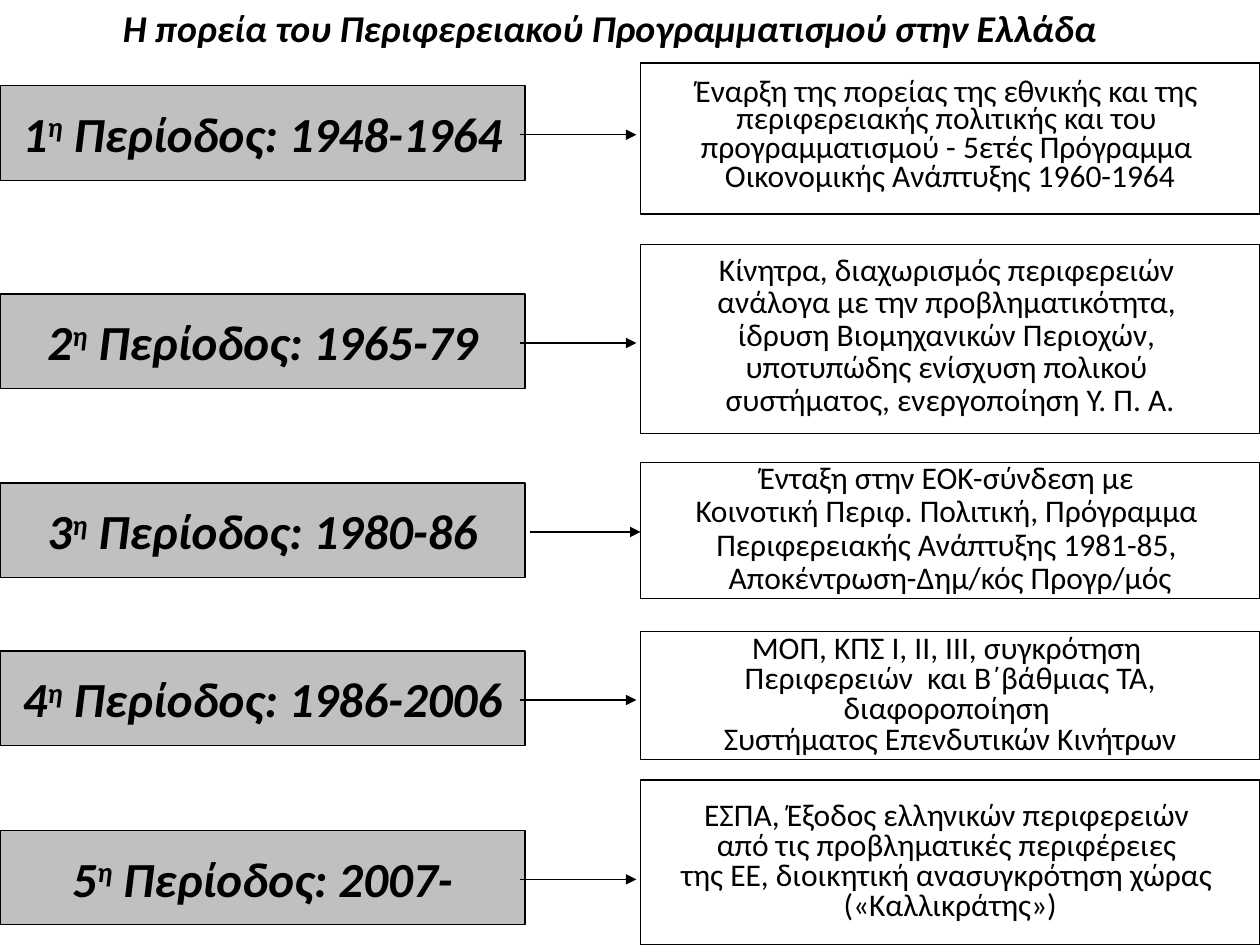
import pptx
import pptx.util
import pptx.dml.color
import pptx.enum.shapes
import pptx.enum.text
import pptx.oxml
import pptx.oxml.ns
from pptx.util import Pt

BLACK = pptx.dml.color.RGBColor(0, 0, 0)
GREY = pptx.dml.color.RGBColor(0xC0, 0xC0, 0xC0)

PERIOD_WIDTH, PERIOD_HEIGHT = 300, 54
EVENT_LEFT, EVENT_WIDTH = 366, 354
ARROW_DROP = 28

PERIODS = [
    (49, "1948-1964", (297, 363.6)),
    (168, "1965-79", (297, 363.6)),
    (276, "1980-86", (303, 366)),
    (372, "1986-2006", (297, 363.6)),
    (474.5, "2007-", (297, 363.6)),
]

EVENTS = [
    (36, 86.4, 0.55, 2.7, 1.8, [
        "Έναρξη της πορείας της εθνικής και της ",
        "περιφερειακής πολιτικής και του ",
        "προγραμματισμού - 5ετές Πρόγραμμα ",
        "Οικονομικής Ανάπτυξης 1960-1964"]),
    (139.7, 108, 0.65, 3.6, 1, [
        "Κίνητρα, διαχωρισμός περιφερειών ",
        "ανάλογα με την προβληματικότητα, ",
        "ίδρυση Βιομηχανικών Περιοχών, ",
        "υποτυπώδης ενίσχυση πολικού ",
        "συστήματος, ενεργοποίηση Υ. Π. Α."]),
    (264.2, 77.8, 0.8, 1.8, 0, [
        "Ένταξη στην ΕΟΚ-σύνδεση με ",
        "Κοινοτική Περιφ. Πολιτική, Πρόγραμμα ",
        "Περιφερειακής Ανάπτυξης 1981-85, ",
        "Αποκέντρωση-Δημ/κός Προγρ/μός"]),
    (360.7, 73.5, 0.8, 0, 0, [
        "ΜΟΠ, ΚΠΣ Ι, ΙΙ, ΙΙΙ, συγκρότηση ",
        "Περιφερειών  και Β΄βάθμιας ΤΑ,",
        "διαφοροποίηση ",
        "Συστήματος Επενδυτικών Κινήτρων"]),
    (445.7, 94.3, 0.8, 0, 0, [
        "ΕΣΠΑ, Έξοδος ελληνικών περιφερειών ",
        "από τις προβληματικές περιφέρειες ",
        "της ΕΕ, διοικητική ανασυγκρότηση χώρας ",
        "(«Καλλικράτης»)"]),
]


def format_paragraph(p, size, strong=False):
    p.alignment = pptx.enum.text.PP_ALIGN.CENTER
    p.font.name = "Calibri"
    p.font.size = Pt(size)
    p.font.bold = p.font.italic = strong
    p.font.color.rgb = BLACK


def add_title(s, text):
    sp = s.shapes.title
    sp.left, sp.top, sp.width, sp.height = Pt(-65.5), Pt(0), Pt(828), Pt(31.7)
    tf = sp.text_frame
    tf.text = text
    tf.auto_size = pptx.enum.text.MSO_AUTO_SIZE.NONE
    tf.vertical_anchor = pptx.enum.text.MSO_ANCHOR.MIDDLE
    format_paragraph(tf.paragraphs[0], 21.6, strong=True)


def add_box(s, left, top, width, height, fill=None):
    sp = s.shapes.add_shape(pptx.enum.shapes.MSO_SHAPE.RECTANGLE,
                            Pt(left), Pt(top), Pt(width), Pt(height))
    sp.shadow.inherit = False
    if fill is None:
        sp.fill.background()
    else:
        sp.fill.solid()
        sp.fill.fore_color.rgb = fill
    sp.line.color.rgb = BLACK
    sp.line.width = Pt(0.75)
    tf = sp.text_frame
    tf.word_wrap = False
    tf.vertical_anchor = pptx.enum.text.MSO_ANCHOR.MIDDLE
    return tf


def add_period(s, number, top, years):
    tf = add_box(s, 0, top, PERIOD_WIDTH, PERIOD_HEIGHT, GREY)
    p = tf.paragraphs[0]
    format_paragraph(p, 28, strong=True)
    for text in (str(number), "η", f" Περίοδος: {years}"):
        r = p.add_run()
        r.text = text
        if text == "η":
            r._r.get_or_add_rPr().set("baseline", "30000")


def add_event(s, top, height, spacing, before, after, lines):
    tf = add_box(s, EVENT_LEFT, top, EVENT_WIDTH, height)
    tf.text = "\n".join(lines)
    for p in tf.paragraphs:
        format_paragraph(p, 18)
        p.line_spacing = spacing
        p.space_before = Pt(before)
        p.space_after = Pt(after)
    return tf


def add_arrow(s, start, end, y):
    c = s.shapes.add_connector(pptx.enum.shapes.MSO_CONNECTOR.STRAIGHT,
                               Pt(start), Pt(y), Pt(end), Pt(y))
    c.line.color.rgb = BLACK
    c.line.width = Pt(0.75)
    ln = c.line._get_or_add_ln()
    tail = pptx.oxml.parse_xml(
        f'<a:tailEnd {pptx.oxml.ns.nsdecls("a")} type="triangle"/>')
    ln.append(tail)
    effects = pptx.oxml.parse_xml(f'<a:effectLst {pptx.oxml.ns.nsdecls("a")}/>')
    ln.addnext(effects)


def main():
    prs = pptx.Presentation()
    prs.slide_width, prs.slide_height = Pt(720), Pt(540)
    s = prs.slides.add_slide(prs.slide_layouts[5])
    add_title(s, "Η πορεία του Περιφερειακού Προγραμματισμού στην Ελλάδα")
    frames = [add_event(s, *event) for event in EVENTS]
    opening = frames[0].paragraphs[0]
    opening.space_before = opening.space_after = Pt(0.9)
    for number, (top, years, (start, end)) in enumerate(PERIODS, 1):
        add_period(s, number, top, years)
        add_arrow(s, start, end, top + ARROW_DROP)
    prs.save("out.pptx")


if __name__ == "__main__":
    main()
